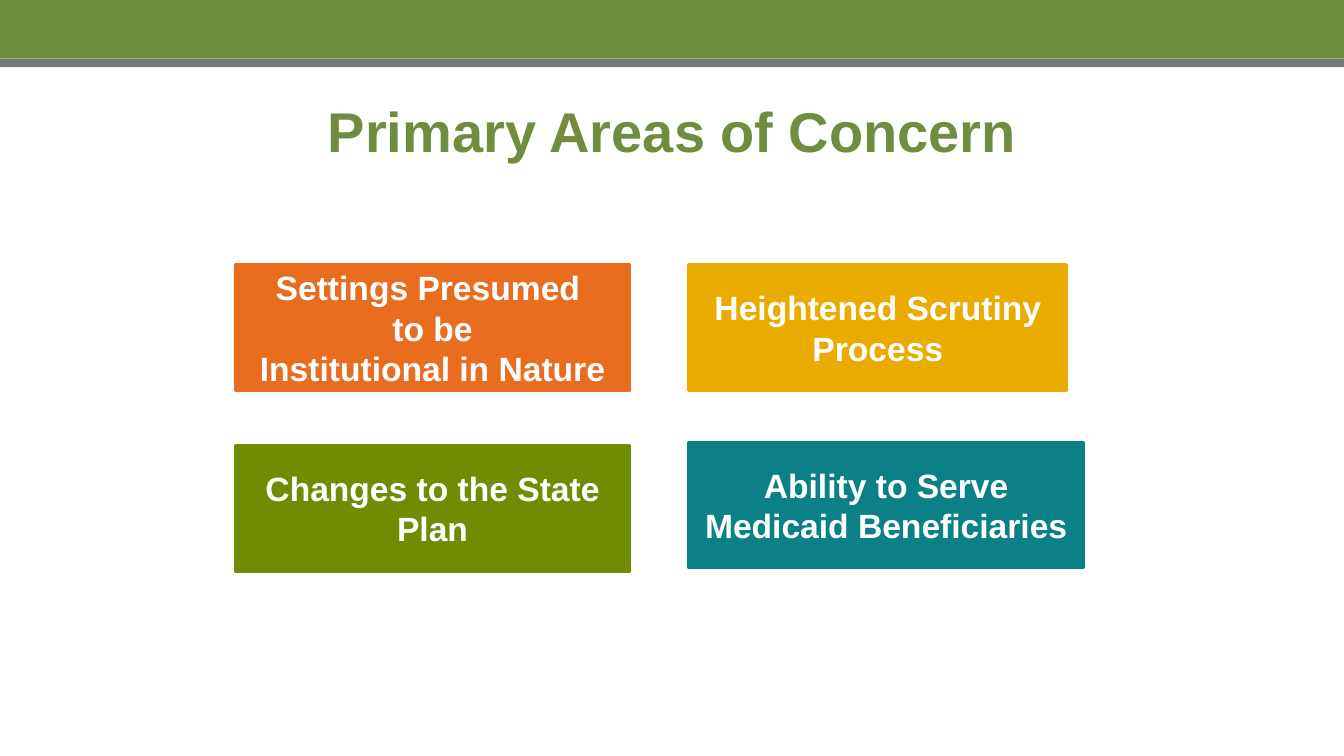
import dataclasses

import pptx
import pptx.dml.color
import pptx.enum.shapes
import pptx.enum.text
import pptx.util

PX = 9525  # EMU per px, 96 px to the inch


@dataclasses.dataclass(frozen=True)
class Theme:
    font: str = "Arial"
    title_size: int = 40
    box_size: int = 24
    outline: int = 2
    header: str = "708C3F"
    rule: str = "75777A"
    white: str = "FFFFFF"
    orange: str = "E86D1F"
    gold: str = "EAAB00"
    green: str = "708C03"
    teal: str = "0B8187"


THEME = Theme()


def rgb(color):
    return pptx.dml.color.RGBColor.from_string(color)


def px(*lengths):
    return [pptx.util.Emu(length * PX) for length in lengths]


def write_centred(shape, text, size, color):
    """Fill the shape with bold text, one paragraph per line of text."""
    frame = shape.text_frame
    frame.word_wrap = True
    frame.vertical_anchor = pptx.enum.text.MSO_ANCHOR.MIDDLE
    frame.text = text
    for paragraph in frame.paragraphs:
        paragraph.alignment = pptx.enum.text.PP_ALIGN.CENTER
        for run in paragraph.runs:
            run.font.name = THEME.font
            run.font.size = pptx.util.Pt(size)
            run.font.bold = True
            run.font.color.rgb = rgb(color)


def add_bar(slide, left, top, width, height, color):
    shape = slide.shapes.add_shape(
        pptx.enum.shapes.MSO_SHAPE.RECTANGLE, *px(left, top, width, height))
    shape.shadow.inherit = False
    shape.fill.solid()
    shape.fill.fore_color.rgb = rgb(color)
    shape.line.fill.background()
    return shape


def add_concern(slide, left, top, width, height, color, text):
    """Add an outlined, filled box that names one area of concern."""
    shape = add_bar(slide, left, top, width, height, color)
    shape.line.color.rgb = rgb(color)
    shape.line.width = pptx.util.Pt(THEME.outline)
    write_centred(shape, text, THEME.box_size, THEME.white)


def add_title(slide, text):
    shape = slide.shapes.add_textbox(*px(160, 64, 960, 120))
    write_centred(shape, text, THEME.title_size, THEME.header)


def main():
    presentation = pptx.Presentation()
    presentation.slide_width, presentation.slide_height = px(1280, 720)
    slide = presentation.slides.add_slide(presentation.slide_layouts[6])

    add_bar(slide, 0, 0, 1280, 56, THEME.header)
    add_bar(slide, 0, 56, 1280, 8, THEME.rule)
    add_title(slide, "Primary Areas of Concern")

    left_column, right_column = 224, 656
    top_row, box_height = 252, 120
    concerns = [
        (left_column, top_row, 376, THEME.orange,
         "Settings Presumed \nto be\n Institutional in Nature "),
        (right_column, top_row, 360, THEME.gold, "Heightened Scrutiny Process"),
        (left_column, 424, 376, THEME.green, "Changes to the State Plan"),
        (right_column, 421, 376, THEME.teal,
         "Ability to Serve Medicaid Beneficiaries"),
    ]
    for left, top, width, color, text in concerns:
        add_concern(slide, left, top, width, box_height, color, text)

    presentation.save("out.pptx")


if __name__ == "__main__":
    main()
